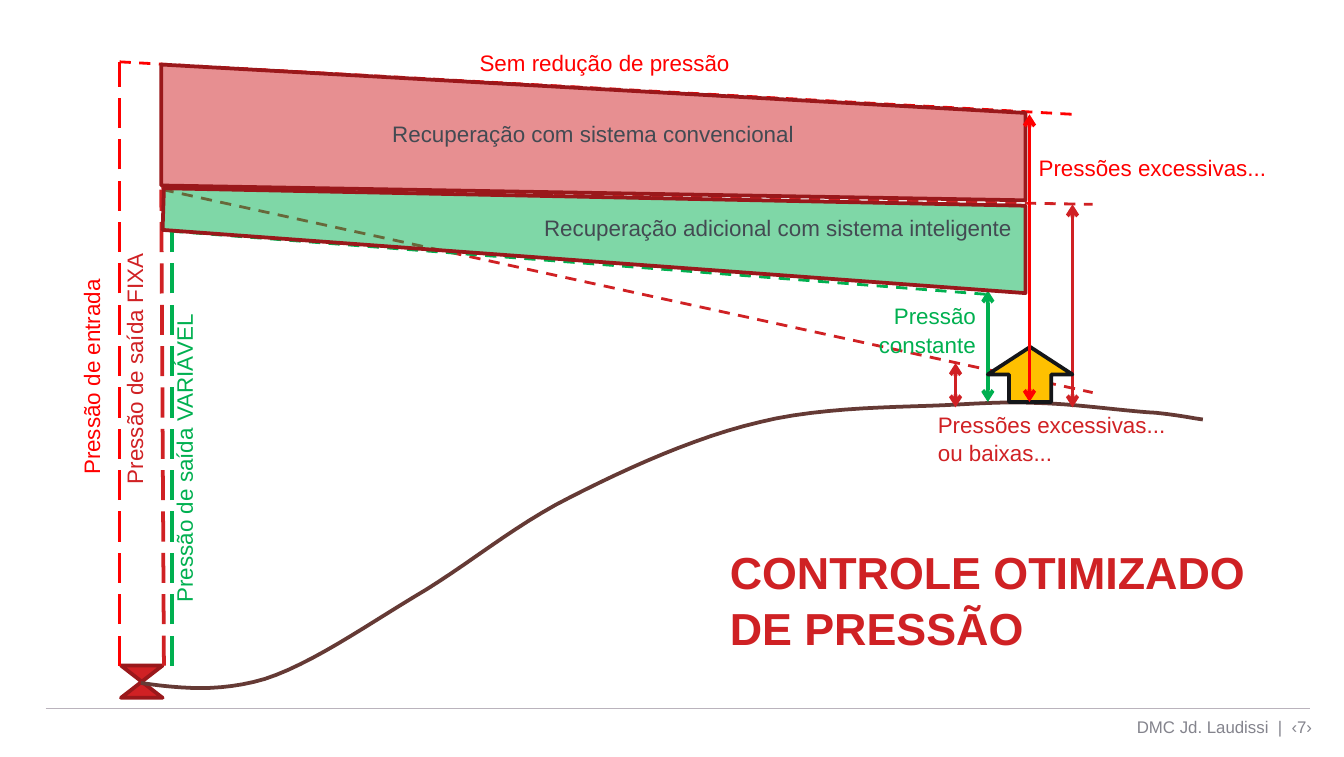
"""Build the slide on optimised pressure control in a water network."""
from dataclasses import dataclass

from lxml.etree import SubElement
from pptx import Presentation
from pptx.dml.color import RGBColor
from pptx.enum.dml import MSO_LINE
from pptx.enum.shapes import MSO_CONNECTOR, MSO_SHAPE
from pptx.enum.text import MSO_ANCHOR, PP_ALIGN
from pptx.oxml.ns import qn
from pptx.util import Inches, Pt

RED, CRIMSON, DARK_RED, GREEN = "FF0000", "D02124", "9A181B", "00B050"
SLATE, BROWN, AMBER, BLACK = "434A52", "653A35", "FFC000", "141619"
LEFT, CENTER, RIGHT = PP_ALIGN.LEFT, PP_ALIGN.CENTER, PP_ALIGN.RIGHT
TOP, MIDDLE = MSO_ANCHOR.TOP, MSO_ANCHOR.MIDDLE
CELL = Inches(0.1)
Point = tuple[float, float]


@dataclass
class Line:
    """A straight line between two (column, row) points."""
    start: Point
    end: Point
    color: str
    width: float = 2
    dash: MSO_LINE | None = None
    arrows: bool = False


@dataclass
class Label:
    """A text box at column, row with a size in grid cells."""
    lines: tuple[str, ...]
    area: tuple[float, float, float, float]
    color: str
    align: PP_ALIGN = LEFT
    size: float = 12
    anchor: MSO_ANCHOR = TOP
    upright: bool = False


@dataclass
class Band:
    """A translucent four-sided zone with a caption."""
    corners: tuple[Point, ...]
    fill: str
    caption: str
    align: PP_ALIGN
    anchor: MSO_ANCHOR
    top_inset: float


def grid(*cells: float) -> list[int]:
    """Turn grid cells into slide lengths."""
    return [round(cell * CELL) for cell in cells]


def rgb(color: str) -> RGBColor:
    """Turn a hex string into a colour."""
    return RGBColor.from_string(color)


def outline(shape, color: str, width: float = 2) -> None:
    """Set the colour and width of a shape's line."""
    shape.line.color.rgb = rgb(color)
    shape.line.width = Pt(width)


def write(shape, lines, color, align=LEFT, size=12, anchor=TOP, bold=False) -> None:
    """Write formatted paragraphs into a shape."""
    frame = shape.text_frame
    frame.word_wrap = True
    frame.vertical_anchor = anchor
    frame.text = "\n".join(lines)
    for para in frame.paragraphs:
        para.alignment, para.line_spacing = align, 1.05
        para.space_before = para.space_after = Pt(0)
        for span in para.runs:
            span.font.color.rgb = rgb(color)
            for name, value in {"name": "Arial", "size": Pt(size), "bold": bold}.items():
                setattr(span.font, name, value)


def draw_line(page, line: Line) -> None:
    """Draw a straight connector, dashed or with two arrowheads if asked."""
    connector = page.shapes.add_connector(
        MSO_CONNECTOR.STRAIGHT, *grid(*line.start, *line.end))
    outline(connector, line.color, line.width)
    if line.dash:
        connector.line.dash_style = line.dash
    if line.arrows:
        stroke = connector.line._get_or_add_ln()
        for end in ("a:headEnd", "a:tailEnd"):
            SubElement(stroke, qn(end), type="arrow")
    SubElement(connector._element.spPr, qn("a:effectLst"))


def draw_label(page, label: Label) -> None:
    """Draw a text box, turned to read upwards if asked."""
    box = page.shapes.add_textbox(*grid(*label.area))
    write(box, label.lines, label.color, label.align, label.size, label.anchor)
    if label.upright:
        box.text_frame._txBody.bodyPr.set("vert", "vert270")


def draw_preset(page, preset: MSO_SHAPE, area, fill: str, edge: str) -> None:
    """Draw a filled preset shape."""
    shape = page.shapes.add_shape(preset, *grid(*area))
    shape.shadow.inherit = False
    shape.fill.solid()
    shape.fill.fore_color.rgb = rgb(fill)
    outline(shape, edge)


def draw_path(page, points, edge: str, close: bool):
    """Draw a freeform through grid points."""
    builder = page.shapes.build_freeform(*grid(*points[0]))
    builder.add_line_segments([grid(*point) for point in points[1:]], close=close)
    shape = builder.convert_to_shape()
    shape.shadow.inherit = False
    outline(shape, edge)
    return shape


def draw_band(page, band: Band) -> None:
    """Draw a half-transparent zone with its caption."""
    shape = draw_path(page, band.corners, DARK_RED, True)
    shape.fill.solid()
    shape.fill.fore_color.rgb = rgb(band.fill)
    tint = shape._element.spPr.find(qn("a:solidFill"))[0]
    SubElement(tint, qn("a:alpha"), val="50000")
    write(shape, (band.caption,), SLATE, band.align, anchor=band.anchor)
    shape.text_frame.margin_top = Inches(band.top_inset)


def bezier(knots: list[Point], steps: int = 12) -> list[Point]:
    """Sample a chain of cubic curves into points."""
    points = [knots[0]]
    for first in range(0, len(knots) - 1, 3):
        for step in range(1, steps + 1):
            t = step / steps
            weights = ((1 - t) ** 3, 3 * t * (1 - t) ** 2, 3 * t * t * (1 - t), t ** 3)
            points.append(tuple(
                sum(weight * knot[axis] for weight, knot in zip(weights, knots[first:first + 4]))
                for axis in (0, 1)))
    return points


TERRAIN = [
    (10.5, 50.8), (13.4, 51.2), (16.3, 51.5), (19.7, 50.5), (23.1, 49.4), (27, 46.7),
    (30.8, 44.4), (34.6, 42.2), (38.2, 39.1), (42.4, 37), (46.7, 34.8), (51.8, 32.5),
    (56.5, 31.4), (61.3, 30.2), (67.5, 30.3), (71, 30.1), (74.6, 29.9), (75.4, 29.9),
    (77.9, 30), (80.4, 30.1), (84, 30.6), (86, 30.7), (87.9, 30.9), (88.7, 31.1), (89.5, 31.2)]
LONG, DASH = MSO_LINE.LONG_DASH, MSO_LINE.DASH
PRESSURE_LINES = [
    Line((8.9, 49.5), (8.9, 4.6), RED, dash=LONG),
    Line((8.9, 4.6), (79.8, 8.5), RED, 1.5, DASH),
    Line((12.2, 49.5), (12, 14.1), CRIMSON, dash=LONG),
    Line((12.1, 14.1), (81.3, 29.2), CRIMSON, 1.5, DASH),
    Line((12, 14), (81.3, 15.2), CRIMSON, 1.5, DASH),
    Line((79.8, 15.2), (79.8, 30.3), CRIMSON, arrows=True),
    Line((71.1, 27), (71.1, 30.3), CRIMSON, arrows=True),
    Line((73.5, 21.6), (73.5, 29.9), GREEN, arrows=True),
    Line((12.8, 17.2), (73.5, 21.9), GREEN, 1.5, DASH),
    Line((12.8, 49.5), (12.8, 17.2), GREEN, dash=LONG)]
BANDS = [
    Band(((12, 4.8), (12, 13.8), (76.3, 14.9), (76.3, 8.4)), CRIMSON,
         "Recuperação com sistema convencional", CENTER, MIDDLE, 0.05),
    Band(((12.2, 14), (12.1, 17.1), (76.3, 21.8), (76.3, 15.3)), GREEN,
         "Recuperação adicional com sistema inteligente", RIGHT, TOP, 0.18)]
LABELS = [
    Label(("DMC Jd. Laudissi\u00a0 |\u00a0 ‹7›",), (57.4, 52.5, 41.2, 3), "84848D", RIGHT, 9, MIDDLE),
    Label(("Pressão de entrada",), (5.2, 2.8, 4, 33.5), RED, upright=True),
    Label(("Pressão de saída FIXA",), (8.4, 3.5, 4, 33.5), CRIMSON, upright=True),
    Label(("Pressão de saída VARIÁVEL",), (12.1, 12.3, 4, 33.5), GREEN, upright=True),
    Label(("Pressões excessivas...", "ou baixas..."), (68.8, 30, 19.7, 5), CRIMSON),
    Label(("Pressões excessivas...",), (76.3, 10.9, 19.7, 3.1), RED),
    Label(("Pressão constante",), (60.2, 21.9, 13.4, 5.2), GREEN, RIGHT),
    Label(("Sem redução de pressão",), (34.7, 3.1, 30.7, 3), RED)]


def main() -> None:
    """Assemble and save the slide."""
    deck = Presentation()
    deck.slide_width, deck.slide_height = grid(100, 56.3)
    page = deck.slides.add_slide(deck.slide_layouts[5])
    title = page.shapes.title
    title.left, title.top, title.width, title.height = grid(53.3, 42, 43.3, 5)
    write(title, ("CONTROLE OTIMIZADO DE PRESSÃO",), "CF2124", LEFT, 24, MIDDLE, True)
    draw_line(page, Line((3.4, 52.7), (97.5, 52.7), "BAB3BC", 0.5))
    draw_preset(page, MSO_SHAPE.FLOWCHART_COLLATE, (9, 49.5, 3.1, 2.4), CRIMSON, DARK_RED)
    draw_path(page, bezier(TERRAIN), BROWN, False).fill.background()
    for line in PRESSURE_LINES:
        draw_line(page, line)
    for band in BANDS:
        draw_band(page, band)
    draw_preset(page, MSO_SHAPE.UP_ARROW, (73.5, 25.8, 6.3, 4.1), AMBER, BLACK)
    draw_line(page, Line((76.6, 8.5), (76.6, 29.9), RED, arrows=True))
    for label in LABELS:
        draw_label(page, label)
    deck.save("out.pptx")


if __name__ == "__main__":
    main()
